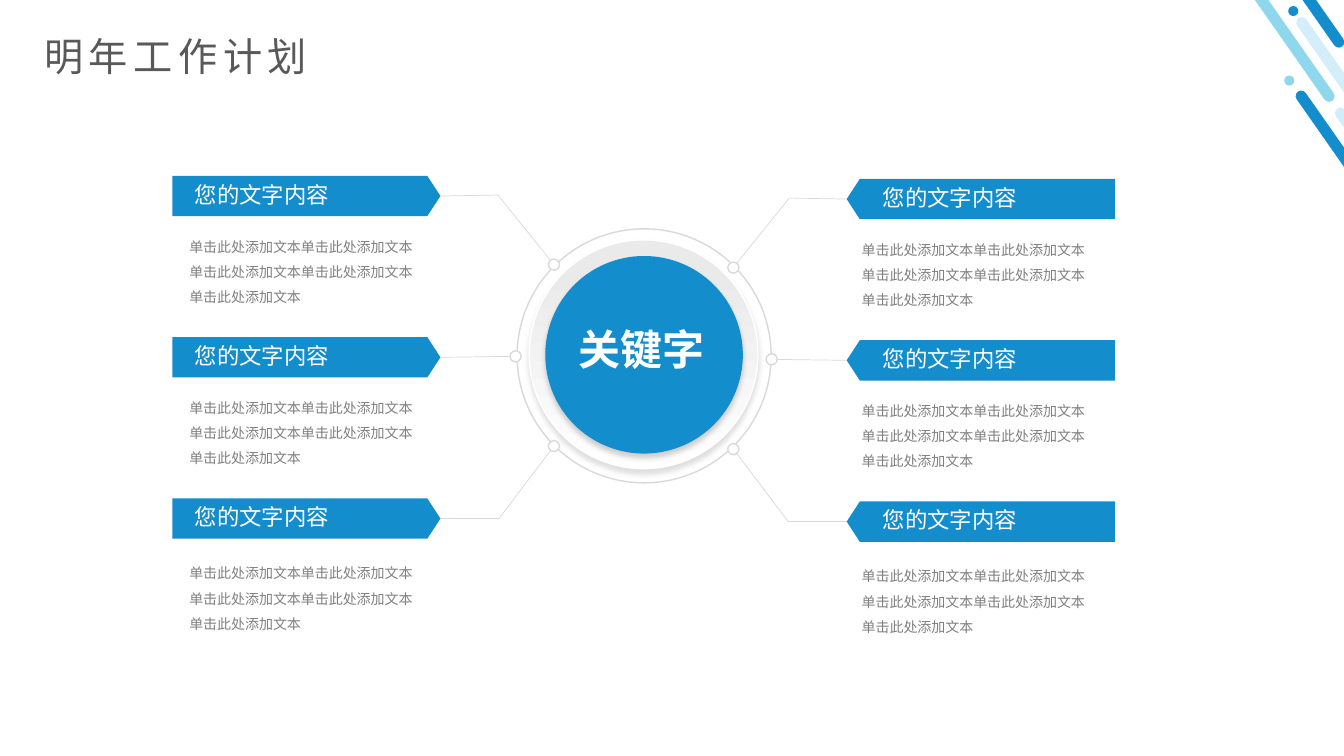
from lxml.etree import SubElement
from pptx import Presentation
from pptx.dml.color import RGBColor
from pptx.enum.shapes import MSO_CONNECTOR, MSO_SHAPE
from pptx.enum.text import MSO_AUTO_SIZE, PP_ALIGN
from pptx.oxml.ns import qn
from pptx.util import Inches, Pt

FONT = "Noto Sans CJK SC"
BLUE, SKY, PALE = "138DCC", "8FD7ED", "D3EEF9"
WHITE, RULE, GREY, DARK = "FFFFFF", "D9D9D9", "808080", "595959"
HEADING = "您的文字内容"
BODY = "单击此处添加文本" * 5

# Grid: 133.33 columns by 75 rows
COLUMNS, ROWS = 133.33, 75
CELL = Inches(0.1)
MIRROR = 127.7  # sum of a left column and its mirrored right column
RIGHT_DROP = 0.3  # the right side sits slightly lower
FIRST_TIP, ROW_STEP = 19.45, 16

# Per row: node centre, bend of the connector (None if straight), body top
BRANCHES = [
    ((54.95, 26.25), (49.4, 19.35), 22.3),
    ((51.15, 35.35), None, 38.3),
    ((54.95, 44.25), (49.5, 51.45), 54.7),
]


def cells(*values):
    return [round(value * CELL) for value in values]


def color(hex_code):
    return RGBColor.from_string(hex_code)


def style(shape, fill=None, line=None):
    shape.shadow.inherit = False
    if fill:
        shape.fill.solid()
        shape.fill.fore_color.rgb = color(fill)
    else:
        shape.fill.background()
    if line:
        shape.line.color.rgb = color(line)
        shape.line.width = Pt(1)
    else:
        shape.line.fill.background()


def add_circle(page, x, y, diameter, fill=None, line=None):
    """Draw a circle around the centre x, y."""
    box = cells(x - diameter / 2, y - diameter / 2, diameter, diameter)
    circle = page.shapes.add_shape(MSO_SHAPE.OVAL, *box)
    style(circle, fill, line)
    return circle


def add_shadow(shape, opacity):
    effects = shape._element.spPr.find(qn("a:effectLst"))
    shadow = SubElement(effects, qn("a:outerShdw"), blurRad=str(Pt(4)), dist=str(Pt(3)),
                        dir="5400000", algn="t", rotWithShape="0")
    black = SubElement(shadow, qn("a:srgbClr"), val="000000")
    SubElement(black, qn("a:alpha"), val=str(opacity * 1000))


def add_text(page, box, text, size, hex_code, bold=False, grow=True):
    frame = page.shapes.add_textbox(*cells(*box)).text_frame
    frame.word_wrap = True
    frame.auto_size = MSO_AUTO_SIZE.SHAPE_TO_FIT_TEXT if grow else MSO_AUTO_SIZE.NONE
    para = frame.paragraphs[0]
    para.text = text
    para.font.size = Pt(size)
    para.font.bold = bold
    para.font.name = FONT
    para.font.color.rgb = color(hex_code)
    SubElement(para.font._element, qn("a:ea"), typeface=FONT)
    return para


def add_rule(page, start, end):
    rule = page.shapes.add_connector(MSO_CONNECTOR.STRAIGHT, *cells(*start, *end))
    rule.line.color.rgb = color(RULE)
    rule.line.width = Pt(0.5)
    SubElement(rule._element.spPr, qn("a:effectLst"))


def add_banner(page, points):
    builder = page.shapes.build_freeform(*cells(*points[0]))
    builder.add_line_segments([cells(*point) for point in points[1:]], close=True)
    style(builder.convert_to_shape(), BLUE)


def add_stripes(page):
    """Slanted bars and dots in the top right corner."""
    stripes = [
        (134.5, 7.1, 21.9, BLUE), (138.4, 8.8, 21.9, PALE), (123.7, -15.1, 27.6, SKY),
        (136.2, -0.7, 27.6, PALE), (126.3, -15.3, 21.9, BLUE),
    ]
    for left, top, length, fill in stripes:
        bar = page.shapes.add_shape(MSO_SHAPE.ROUNDED_RECTANGLE, *cells(left, top, 1.1, length))
        bar.adjustments[0] = 0.5
        bar.rotation = 325
        style(bar, fill)
    add_circle(page, 127.9, 8, 1, SKY)
    add_circle(page, 128.3, 1.1, 1, BLUE)


def add_hub(page):
    """Ring, shaded disc and blue core."""
    add_circle(page, 63.9, 35.3, 25.2, line=RULE)
    disc = add_circle(page, 63.85, 35.15, 22.7, WHITE, WHITE)
    disc.fill.gradient()
    disc.fill.gradient_angle = 270
    for stop, (position, shade) in zip(disc.fill.gradient_stops, [(0.14, "EAEAEA"), (1, WHITE)]):
        stop.position = position
        stop.color.rgb = color(shade)
    add_shadow(disc, 13)
    add_shadow(add_circle(page, 63.9, 35.2, 19.6, BLUE), 18)
    keyword = add_text(page, (55.5, 31.6, 16.3, 6), "关键字", 30, WHITE, bold=True)
    keyword.alignment = PP_ALIGN.CENTER


def add_branch(page, row, right):
    node, bend, body_top = BRANCHES[row]
    tip_row = FIRST_TIP + row * ROW_STEP
    drop = RIGHT_DROP if right else 0

    def place(x, y):
        return (MIRROR - x if right else x), y + drop

    # Connector from the hub to the tip of the banner
    stops = [place(*point) for point in (node, bend, (43.7, tip_row)) if point]
    for start, end in zip(stops, stops[1:]):
        add_rule(page, start, end)
    add_circle(page, *stops[0], 1.1, WHITE, RULE)

    # Banner with its heading, and the body below
    outline = [(43.7, 0), (42.4, 2), (17.1, 2), (17.1, -2), (42.4, -2)]
    add_banner(page, [place(x, tip_row + y) for x, y in outline])
    add_text(page, (86.6 if right else 18.35, tip_row - 2 + drop, 22.8, 3.7), HEADING, 16, WHITE)
    body = add_text(page, (84.5 if right else 17.8, body_top + drop, 25.4, 7.5),
                    BODY, 10, GREY, grow=False)
    body.line_spacing = 1.5
    body.space_before = Pt(13.3)


def main():
    deck = Presentation()
    deck.slide_width, deck.slide_height = cells(COLUMNS, ROWS)
    page = deck.slides.add_slide(deck.slide_layouts[6])
    add_stripes(page)
    title = add_text(page, (3.4, 2.7, 130.2, 5.7), "明年工作计划", 28, DARK)
    title.font._element.set("spc", "400")
    add_hub(page)
    for right in (False, True):
        for row in range(len(BRANCHES)):
            add_branch(page, row, right)
    deck.save("out.pptx")


if __name__ == "__main__":
    main()
